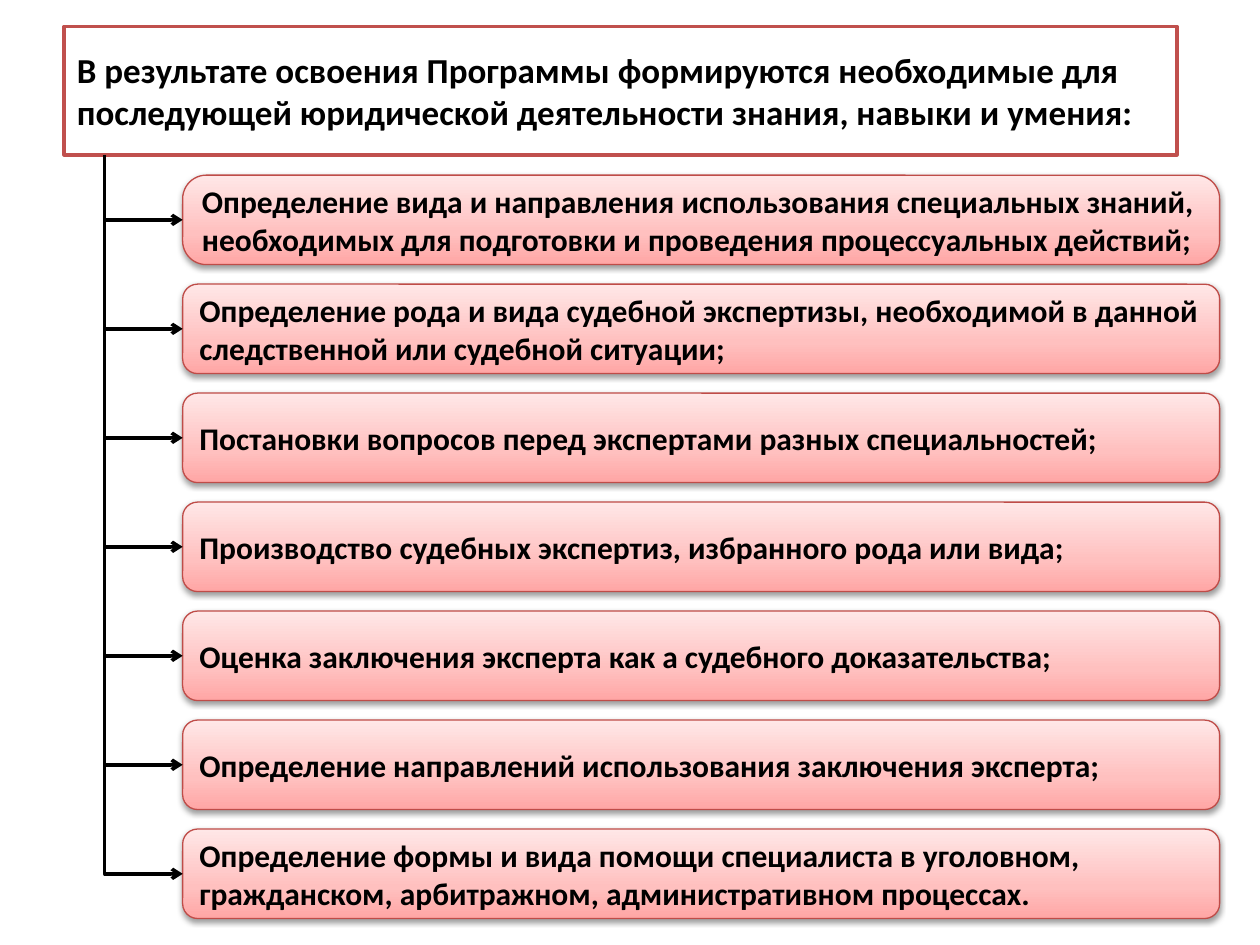
from copy import deepcopy
from dataclasses import dataclass

from lxml import etree
from pptx import Presentation
from pptx import util as u
from pptx.dml.color import RGBColor
from pptx.enum import shapes, text
from pptx.oxml.ns import qn


@dataclass(frozen=True)
class Theme:
    font: str = "Calibri"
    ink: str = "000000"
    paper: str = "FFFFFF"
    header_line: str = "C0504D"
    item_line: str = "BF4C48"
    item_stops: tuple = ((0, "FFA6A5"), (0.35, "FFC0BF"), (1, "FFE7E7"))
    header_size: int = 20
    item_size: int = 18
    thick: float = 2
    thin: float = 0.75


THEME = Theme()
HEADER = "В результате освоения Программы формируются необходимые для последующей юридической деятельности знания, навыки и умения:"
SKILLS = [
    "Определение вида и направления использования специальных знаний, необходимых для подготовки и проведения процессуальных действий;",
    "Определение рода и вида судебной экспертизы, необходимой в данной следственной или судебной ситуации;",
    "Постановки вопросов перед экспертами разных специальностей;",
    "Производство судебных экспертиз, избранного рода или вида;",
    "Оценка заключения эксперта как а судебного доказательства;",
    "Определение направлений использования заключения эксперта;",
    "Определение формы и вида помощи специалиста в уголовном, гражданском, арбитражном, административном процессах.",
]
PITCH = 0.865  # distance between the tops of two skill boxes


def rgb(value):
    return RGBColor.from_string(value)


def apply(target, formats):
    for name, value in formats.items():
        setattr(target, name, value)


def add_xml(parent, tag, **attrs):
    return etree.SubElement(parent, qn(tag), attrs)


def set_line(sp, color, width):
    sp.line.color.rgb = rgb(color)
    sp.line.width = u.Pt(width)


def write(sp, words, size):
    tf = sp.text_frame
    apply(tf, {"word_wrap": True, "auto_size": text.MSO_AUTO_SIZE.NONE,
               "vertical_anchor": text.MSO_ANCHOR.MIDDLE})
    p = tf.paragraphs[0]
    p.alignment = text.PP_ALIGN.LEFT
    r = p.add_run()
    r.text = words
    apply(r.font, {"name": THEME.font, "size": u.Pt(size), "bold": True})
    r.font.color.rgb = rgb(THEME.ink)


def build_header(slide, left, top, width, height):
    sp = slide.shapes.title
    apply(sp, {"left": u.Inches(left), "top": u.Inches(top),
               "width": u.Inches(width), "height": u.Inches(height)})
    # Rounded outline for the title placeholder
    geom = add_xml(sp._element.spPr, "a:prstGeom", prst="roundRect")
    add_xml(geom, "a:avLst")
    sp.fill.solid()
    sp.fill.fore_color.rgb = rgb(THEME.paper)
    set_line(sp, THEME.header_line, THEME.thick)
    write(sp, HEADER, THEME.header_size)


def build_skill(slide, words, left, top, width, height):
    sp = slide.shapes.add_shape(
        shapes.MSO_SHAPE.ROUNDED_RECTANGLE,
        u.Inches(left), u.Inches(top), u.Inches(width), u.Inches(height))
    # Three-stop gradient, darkest at the bottom
    sp.fill.gradient()
    sp.fill.gradient_angle = 90
    stops = sp._element.spPr.find(qn("a:gradFill")).find(qn("a:gsLst"))
    stops.append(deepcopy(stops[-1]))
    for stop, (position, color) in zip(sp.fill.gradient_stops, THEME.item_stops):
        stop.position = position
        stop.color.rgb = rgb(color)
    set_line(sp, THEME.item_line, THEME.thin)
    # Soft shadow below
    sp.shadow.inherit = False
    effects = sp._element.spPr.find(qn("a:effectLst"))
    shadow = add_xml(effects, "a:outerShdw", blurRad=str(u.Pt(3.1)),
                     dist=str(u.Pt(1.6)), dir="5400000", rotWithShape="0")
    color = add_xml(shadow, "a:srgbClr", val=THEME.ink)
    add_xml(color, "a:alpha", val="38000")
    write(sp, words, THEME.item_size)
    return sp


def build_arrow(slide, kind, x1, y1, x2, y2):
    cn = slide.shapes.add_connector(
        kind, u.Inches(x1), u.Inches(y1), u.Inches(x2), u.Inches(y2))
    set_line(cn, THEME.ink, THEME.thick)
    props = cn._element.spPr
    add_xml(props.find(qn("a:ln")), "a:tailEnd", type="arrow")
    add_xml(props, "a:effectLst")
    return cn


def build_trunk(slide, left, top, width, height):
    """Elbow that runs down the left side and turns right at the bottom."""
    cx, cy = left + width / 2, top + height / 2
    cn = build_arrow(slide, shapes.MSO_CONNECTOR.ELBOW,
                     cx + height / 2, cy - width / 2,
                     cx - height / 2, cy + width / 2)
    props = cn._element.spPr
    props.find(qn("a:prstGeom")).set("prst", "bentConnector2")
    props.find(qn("a:xfrm")).set("rot", "16200000")


def build_skills(slide, left, top, width, height, trunk_x, trunk_top):
    # Boxes
    tops = [top + i * PITCH for i in range(len(SKILLS))]
    boxes = [build_skill(slide, words, left, y, width, height)
             for words, y in zip(SKILLS, tops)]
    boxes[0].adjustments[0] = 0.265
    # Trunk to the last box, branches to the others
    centers = [y + height / 2 for y in tops]
    build_trunk(slide, trunk_x, trunk_top, left - trunk_x, centers[-1] - trunk_top)
    for y in centers[:-1]:
        build_arrow(slide, shapes.MSO_CONNECTOR.STRAIGHT, trunk_x, y, left, y)


def main():
    prs = Presentation()
    prs.slide_width, prs.slide_height = u.Inches(10), u.Inches(7.5)
    slide = prs.slides.add_slide(prs.slide_layouts[5])
    build_header(slide, 0.51, 0.21, 8.83, 1.02)
    build_skills(slide, 1.45, 1.39, 8.23, 0.71, trunk_x=0.83, trunk_top=1.23)
    prs.save("out.pptx")


if __name__ == "__main__":
    main()
